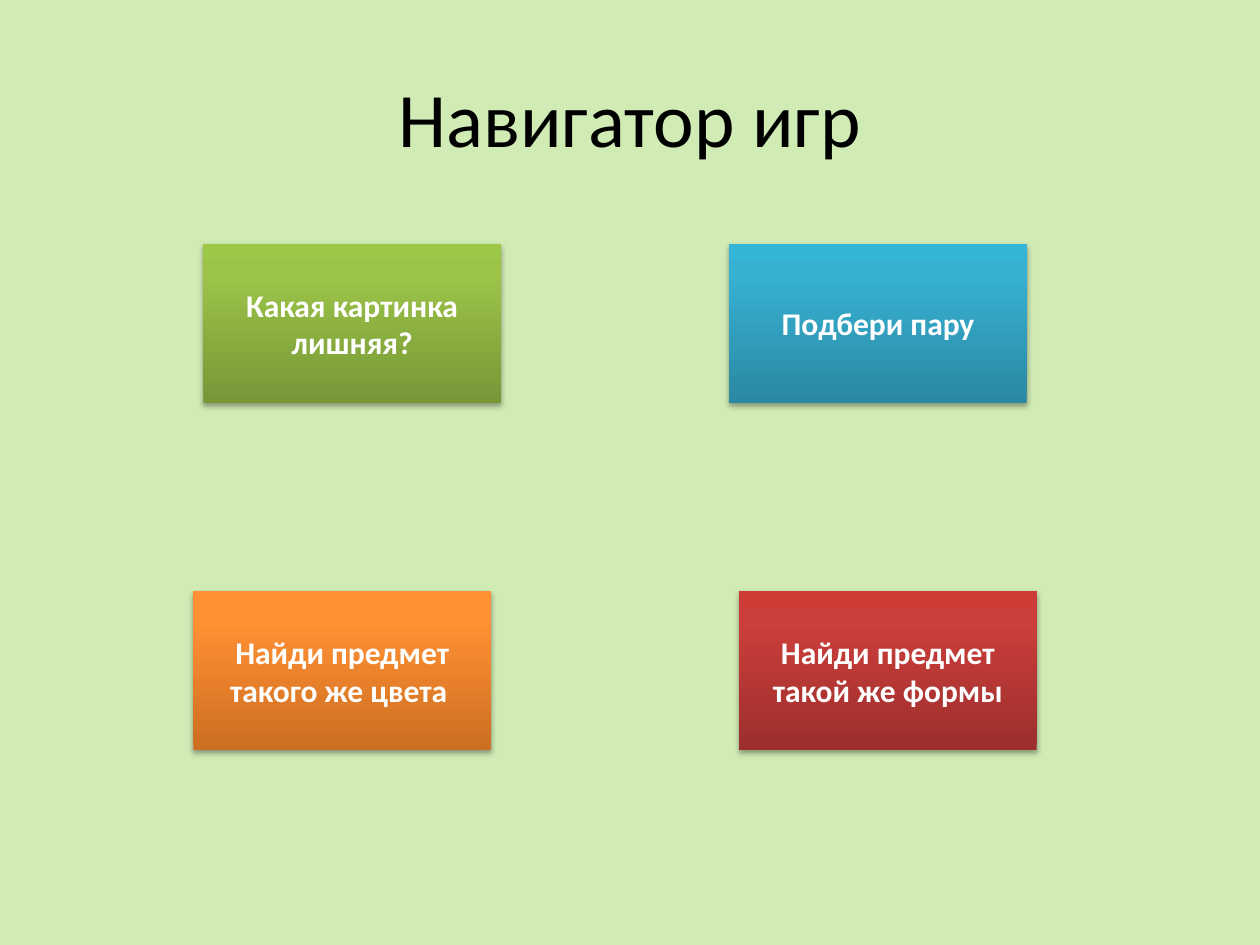
"""Build the game navigator slide with its four game buttons."""
from copy import deepcopy

from pptx import Presentation
from pptx.dml.color import RGBColor
from pptx.enum.shapes import MSO_SHAPE
from pptx.enum.text import MSO_ANCHOR, PP_ALIGN
from pptx.oxml import parse_xml
from pptx.oxml.ns import nsdecls, qn
from pptx.util import Cm, Pt

RECTANGLE = MSO_SHAPE.RECTANGLE
CENTER = PP_ALIGN.CENTER
MIDDLE = MSO_ANCHOR.MIDDLE

SHADOW = (
    f'<a:effectLst {nsdecls("a")}>'
    '<a:outerShdw blurRad="40000" dist="23000" dir="5400000" rotWithShape="0">'
    '<a:srgbClr val="000000"><a:alpha val="35000"/></a:srgbClr>'
    '</a:outerShdw></a:effectLst>'
)


def color(hex_code):
    """Return the colour for a hex string."""
    return RGBColor.from_string(hex_code)


def write(frame, text, size, hex_code, bold):
    """Put one centred paragraph into a text frame."""
    frame.text = text
    frame.word_wrap = True
    frame.vertical_anchor = MIDDLE
    paragraph = frame.paragraphs[0]
    paragraph.alignment = CENTER
    font = paragraph.runs[0].font
    font.name = "Calibri"
    font.size = Pt(size)
    font.bold = bold
    font.color.rgb = color(hex_code)


prs = Presentation()
prs.slide_width = Cm(25.4)
prs.slide_height = Cm(19.05)
slide = prs.slides.add_slide(prs.slide_layouts[5])
slide.background.fill.solid()
slide.background.fill.fore_color.rgb = color("D1EBB5")

title = slide.shapes.title
title.left, title.top = Cm(1.27), Cm(0.76)
title.width, title.height = Cm(22.86), Cm(3.18)
write(title.text_frame, "Навигатор игр", 44, "000000", False)

TOP_ROW, BOTTOM_ROW = 4.92, 11.92
games = [
    ("Какая картинка лишняя?", 4.1, TOP_ROW, ("779737", "9BC348", "9DC746")),
    ("Найди предмет такой же формы", 14.9, BOTTOM_ROW, ("9C2F2D", "CB3E3A", "CE3B37")),
    ("Найди предмет такого же цвета ", 3.9, BOTTOM_ROW, ("CC6E20", "FF9034", "FF9136")),
    ("Подбери пару", 14.7, TOP_ROW, ("2A88A2", "37B1D2", "34B4D6")),
]
for game, left, top, shades in games:
    button = slide.shapes.add_shape(RECTANGLE, Cm(left), Cm(top), Cm(6), Cm(3.2))
    button.line.fill.background()
    button.fill.gradient()
    button.fill.gradient_angle = 90
    properties = button._element.spPr
    stop_list = properties.find(qn("a:gradFill")).find(qn("a:gsLst"))
    stop_list.append(deepcopy(stop_list[-1]))
    for stop, position, shade in zip(button.fill.gradient_stops, (0, 0.8, 1), shades):
        stop.position = position
        stop.color.rgb = color(shade)
    properties.append(parse_xml(SHADOW))
    write(button.text_frame, game, 18, "FFFFFF", True)

prs.save("out.pptx")
